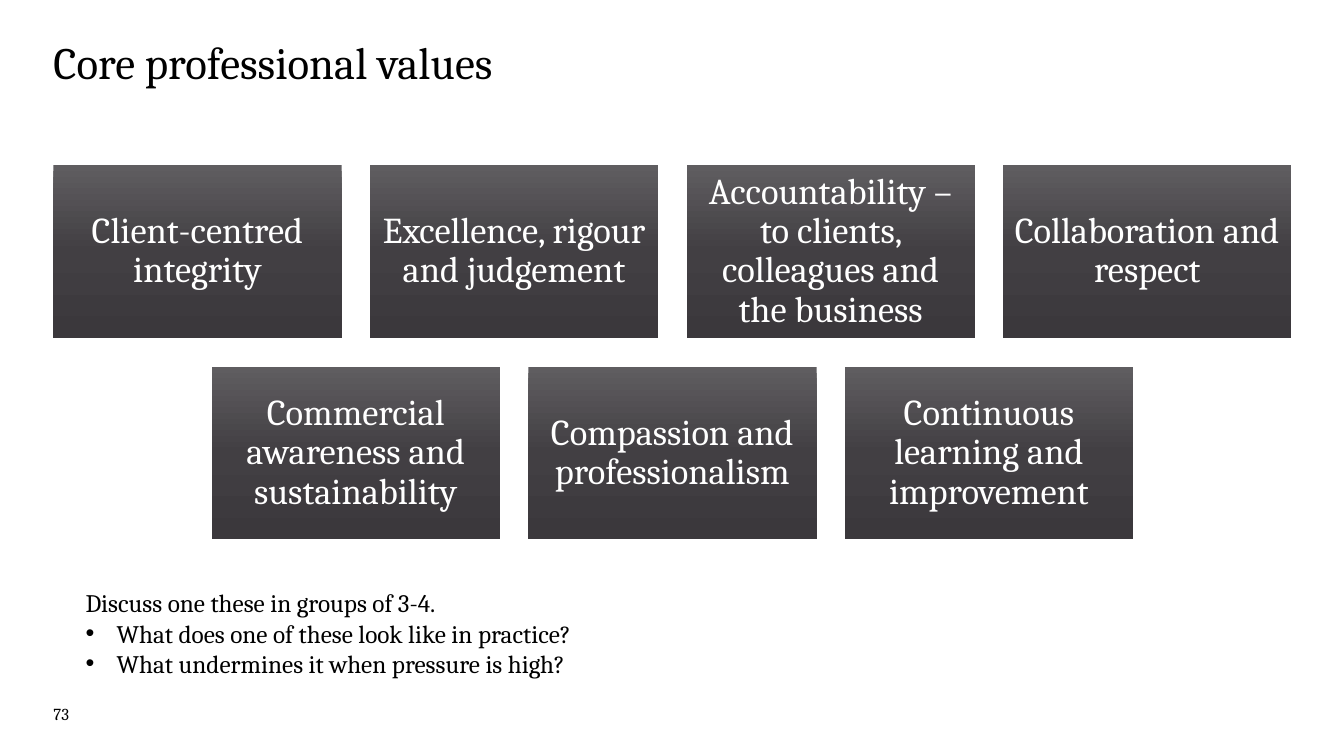
from lxml import etree
from pptx import Presentation
from pptx.dml.color import RGBColor
from pptx.enum.shapes import MSO_SHAPE
from pptx.enum.text import MSO_ANCHOR, MSO_AUTO_SIZE, PP_ALIGN
from pptx.oxml.ns import qn
from pptx.util import Inches, Pt

RECTANGLE = MSO_SHAPE.RECTANGLE
TOP, MIDDLE = MSO_ANCHOR.TOP, MSO_ANCHOR.MIDDLE
LEFT, CENTER = PP_ALIGN.LEFT, PP_ALIGN.CENTER
NO_AUTOFIT = MSO_AUTO_SIZE.NONE

COLORS = {
    "text": "000000",
    "on_card": "FFFFFF",
    "card_top": "5F5D60",
    "card_middle": "423F43",
    "card_bottom": "3B383C",
}
CARD_GRADIENT = [(0, "card_top"), (50, "card_middle"), (100, "card_bottom")]

VALUE_ROWS = [
    [
        "Client-centred integrity",
        "Excellence, rigour and judgement",
        "Accountability – to clients, colleagues and the business",
        "Collaboration and respect",
    ],
    [
        "Commercial awareness and sustainability",
        "Compassion and professionalism",
        "Continuous learning and improvement",
    ],
]
INSTRUCTION = "Discuss one these in groups of 3-4."
QUESTIONS = [
    "What does one of these look like in practice?",
    "What undermines it when pressure is high?",
]


class ValuesSlide:
    font = "Cambria"
    columns = 4
    origin_x, origin_y = 0.53, 1.64
    column_pitch, row_pitch = 3.14, 2.0
    column_gap, row_gap = 0.28, 0.29

    def __init__(self, presentation):
        self.slide = presentation.slides.add_slide(presentation.slide_layouts[5])

    def area(self, column, row, column_span=1, row_span=1):
        return (
            Inches(self.origin_x + column * self.column_pitch),
            Inches(self.origin_y + row * self.row_pitch),
            Inches(column_span * self.column_pitch - self.column_gap),
            Inches(row_span * self.row_pitch - self.row_gap),
        )

    def style(self, frame, size, color="text", align=LEFT, anchor=TOP,
              inset=None, line_spacing=None):
        frame.word_wrap = True
        frame.auto_size = NO_AUTOFIT
        frame.vertical_anchor = anchor
        if inset is not None:
            frame.margin_left = frame.margin_right = Inches(inset)
            frame.margin_top = frame.margin_bottom = Inches(inset)
        for paragraph in frame.paragraphs:
            paragraph.alignment = align
            if line_spacing:
                paragraph.line_spacing = line_spacing
            for run in paragraph.runs:
                run.font.name = self.font
                run.font.size = Pt(size)
                run.font.color.rgb = RGBColor.from_string(COLORS[color])

    def title(self, text):
        heading = self.slide.shapes.title
        heading.left, heading.top, heading.width, heading.height = self.area(
            0, -0.62, self.columns, 0.73)
        heading.text_frame.text = text
        self.style(heading.text_frame, 32, inset=0, line_spacing=0.9)

    def card(self, text, column, row):
        card = self.slide.shapes.add_shape(RECTANGLE, *self.area(column, row))
        self.gradient(card)
        card.line.fill.background()
        card.shadow.inherit = False
        card.text_frame.text = text
        self.style(card.text_frame, 26, "on_card", CENTER, MIDDLE, 0.11, 0.9)

    def gradient(self, card):
        fill = etree.SubElement(card.element.spPr, qn("a:gradFill"), rotWithShape="1")
        stops = etree.SubElement(fill, qn("a:gsLst"))
        for percent, color in CARD_GRADIENT:
            stop = etree.SubElement(stops, qn("a:gs"), pos=str(percent * 1000))
            etree.SubElement(stop, qn("a:srgbClr"), val=COLORS[color])
        etree.SubElement(fill, qn("a:lin"), ang=str(90 * 60000), scaled="0")

    def value_rows(self, rows):
        for row, values in enumerate(rows):
            first_column = (self.columns - len(values)) / 2
            for index, value in enumerate(values):
                self.card(value, first_column + index, row)

    def discussion(self, instruction, questions):
        frame = self.slide.shapes.add_textbox(
            *self.area(0.07, 2.07, 2.21, 0.8)).text_frame
        frame.text = instruction
        for question in questions:
            paragraph = frame.add_paragraph()
            self.bullet(paragraph)
            paragraph.text = question
        self.style(frame, 18)

    def bullet(self, paragraph):
        properties = paragraph._p.get_or_add_pPr()
        indent = Inches(0.31)
        properties.set("marL", str(indent))
        properties.set("indent", str(-indent))
        etree.SubElement(properties, qn("a:buFont"), typeface="Arial")
        etree.SubElement(properties, qn("a:buChar"), char="•")

    def page_number(self, number):
        frame = self.slide.shapes.add_textbox(
            *self.area(0, 2.67, 0.24, 0.35)).text_frame
        frame.text = number
        self.style(frame, 12, inset=0)


def main():
    presentation = Presentation()
    presentation.slide_width = Inches(13.33)
    presentation.slide_height = Inches(7.5)
    slide = ValuesSlide(presentation)
    slide.title("Core professional values")
    slide.value_rows(VALUE_ROWS)
    slide.discussion(INSTRUCTION, QUESTIONS)
    slide.page_number("73")
    presentation.save("out.pptx")


if __name__ == "__main__":
    main()
